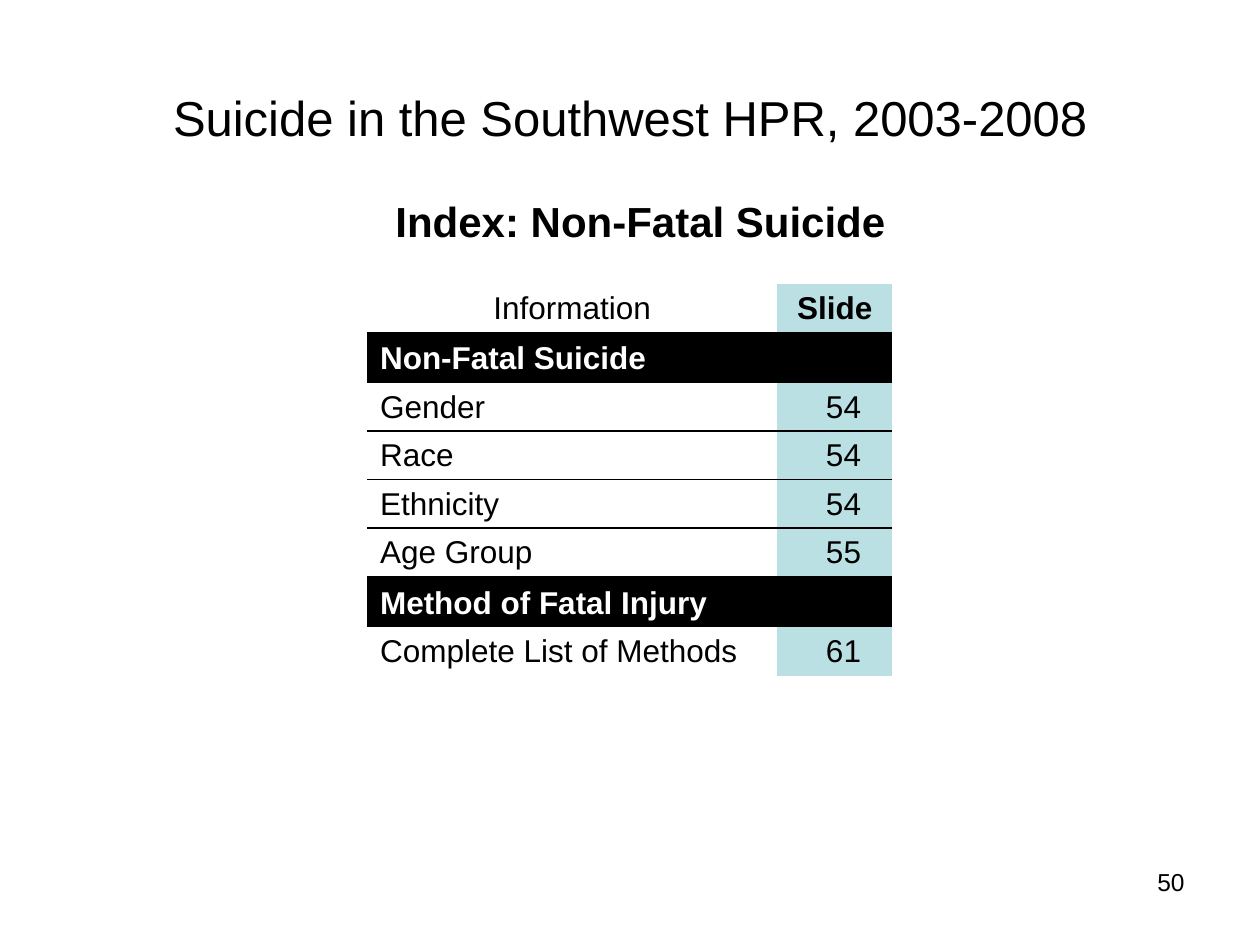
from lxml import etree
from pptx import Presentation
from pptx.dml.color import RGBColor
from pptx.enum import text as t
from pptx.oxml.ns import qn
from pptx.util import Pt

BLACK = RGBColor(0, 0, 0)
WHITE = RGBColor(255, 255, 255)
TEAL = RGBColor(0xBB, 0xE0, 0xE3)
LEFT, MID, RIGHT = t.PP_ALIGN.LEFT, t.PP_ALIGN.CENTER, t.PP_ALIGN.RIGHT
PLAIN = "{2D5ABB26-0587-4C30-8999-92F81FD0307C}"  # table style without grid

# kind of row, label, slide number
ROWS = [
    ("head", "Information", "Slide"),
    ("band", "Non-Fatal Suicide", ""),
    ("item", "Gender", "54"),
    ("item", "Race", "54"),
    ("item", "Ethnicity", "54"),
    ("item", "Age Group", "55"),
    ("band", "Method of Fatal Injury", ""),
    ("item", "Complete List of Methods", "61"),
]
HIGH = {"head": 27, "band": 27.3, "item": 26.3}


def write(frame, words, align, size, bold=False, color=BLACK):
    para = frame.paragraphs[0]
    para.alignment = align
    run = para.add_run()
    run.text = words
    look = {"name": "Arial", "size": Pt(size), "bold": bold}
    for key, val in look.items():
        setattr(run.font, key, val)
    run.font.color.rgb = color
    return para


def add_title(slide, box, words):
    title = slide.shapes.title
    for key, val in zip(("left", "top", "width", "height"), box):
        setattr(title, key, Pt(val))
    title.text_frame.vertical_anchor = t.MSO_ANCHOR.MIDDLE
    write(title.text_frame, words, MID, 28)


def add_label(slide, box, words, align, size, bold=False):
    frame = slide.shapes.add_textbox(*map(Pt, box)).text_frame
    frame.word_wrap = True
    write(frame, words, align, size, bold)


def rule(cell, side):
    """Draw a thin black border on one side; call before filling the cell."""
    line = etree.SubElement(cell._tc.get_or_add_tcPr(), qn("a:" + side), w=str(Pt(1)))
    fill = etree.SubElement(line, qn("a:solidFill"))
    etree.SubElement(fill, qn("a:srgbClr"), val=str(BLACK))


def add_index(slide, box, widths):
    grid = slide.shapes.add_table(len(ROWS), len(widths), *map(Pt, box)).table
    grid._tbl.tblPr.find(qn("a:tableStyleId")).text = PLAIN
    grid.first_row = grid.horz_banding = False
    for col, width in zip(grid.columns, widths):
        col.width = Pt(width)

    kinds = [row[0] for row in ROWS]
    for r, (kind, *words) in enumerate(ROWS):
        grid.rows[r].height = Pt(HIGH[kind])
        item, band = kind == "item", kind == "band"
        for c, word in enumerate(words):
            cell = grid.cell(r, c)
            cell.vertical_anchor = t.MSO_ANCHOR.BOTTOM
            if item and kinds[r - 1] == "item":
                rule(cell, "lnT")
            if item and kinds[r + 1:r + 2] == ["item"]:
                rule(cell, "lnB")
            if band or c == 1:
                cell.fill.solid()
                cell.fill.fore_color.rgb = BLACK if band else TEAL
            else:
                cell.fill.background()
            if item and c == 1:
                cell.margin_right = Pt(18)
            align = MID if kind == "head" else (LEFT, RIGHT)[c]
            bold = band or (kind == "head" and c == 1)
            para = write(cell.text_frame, word, align, 18, bold, WHITE if band else BLACK)
            para.line_spacing = 0.95


def main():
    deck = Presentation()
    deck.slide_width, deck.slide_height = Pt(720), Pt(540)
    slide = deck.slides.add_slide(deck.slide_layouts[5])
    add_label(slide, (516, 492, 168, 37.5), "50", RIGHT, 14)
    add_title(slide, (36, 21.6, 648, 90), "Suicide in the Southwest HPR, 2003-2008")
    add_index(slide, (210, 162, 300, 213.8), (234, 66))
    add_label(slide, (132, 108, 468, 42), "Index: Non-Fatal Suicide", MID, 24, True)
    deck.save("out.pptx")


if __name__ == "__main__":
    main()
